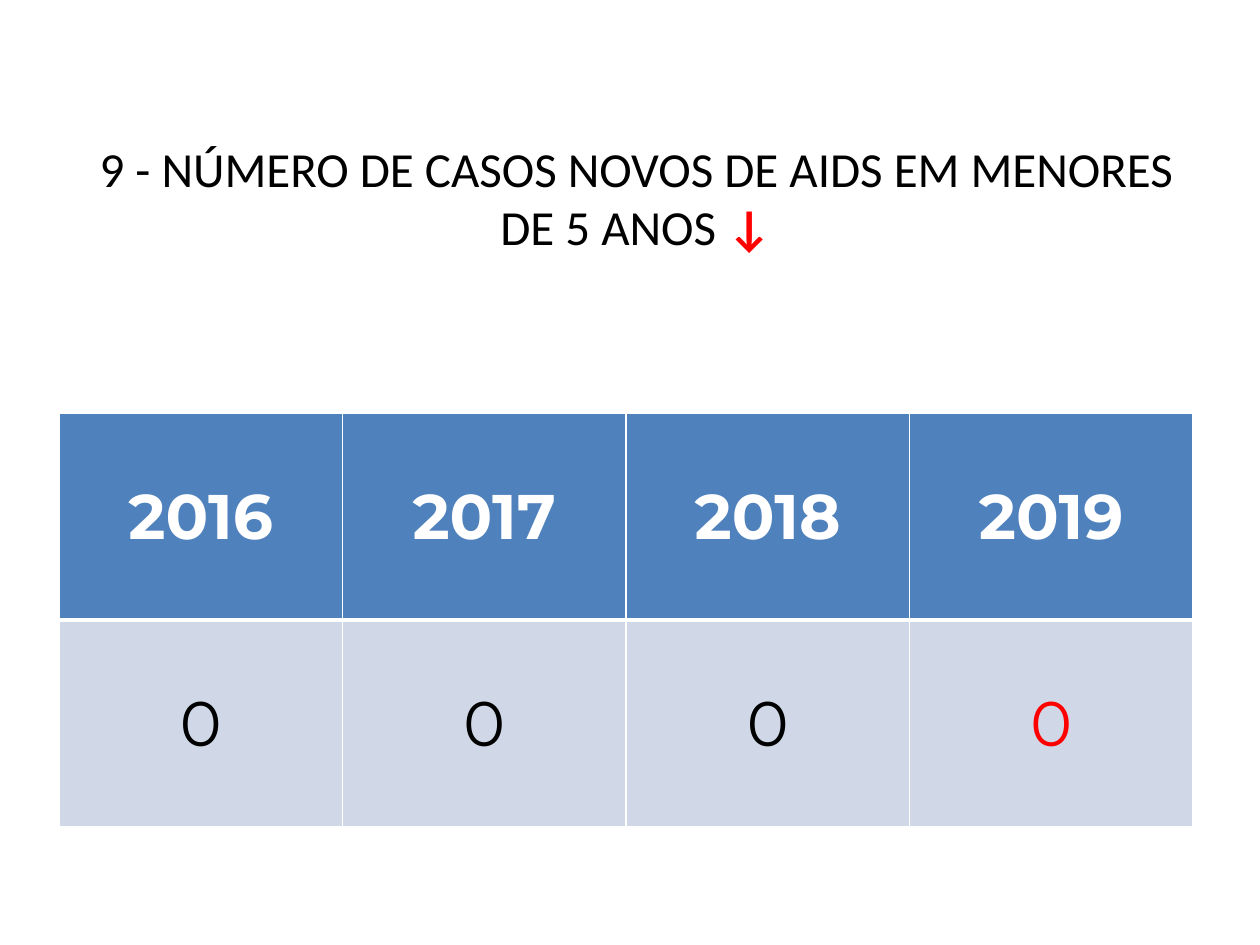
from dataclasses import dataclass

from lxml.etree import SubElement
from pptx import Presentation
from pptx.dml.color import RGBColor as Rgb
from pptx.enum.text import MSO_ANCHOR as Anchor, PP_ALIGN as Align
from pptx.oxml.ns import qn
from pptx.util import Pt

SCALE = 914400 / 126
HUES = {"white": "FFFFFF", "black": "000000", "red": "FF0000",
        "blue": "4F81BD", "pale": "D0D8E8"}


@dataclass
class Run:
    text: str
    size: int
    font: str
    hue: str = "black"
    bold: bool = False


@dataclass
class Row:
    runs: list[Run]
    fill: str
    top: int
    base: int


def px(n: int) -> int:
    return round(n * SCALE)


def write(frame, runs: list[Run]) -> None:
    para = frame.paragraphs[0]
    para.alignment = Align.CENTER
    for item in runs:
        run = para.add_run()
        run.text = item.text
        font = run.font
        font.size, font.name, font.bold = Pt(item.size), item.font, item.bold
        font.color.rgb = Rgb.from_string(HUES[item.hue])


def edge(cell, row: Row) -> None:
    props = cell._tc.get_or_add_tcPr()
    sides = {"lnL": 1, "lnR": 1, "lnT": row.top, "lnB": row.base}
    for spot, (side, wide) in enumerate(sides.items()):
        line = SubElement(props, qn(f"a:{side}"), w=str(Pt(wide)))
        fill = SubElement(line, qn("a:solidFill"))
        SubElement(fill, qn("a:srgbClr"), val=HUES["white"])
        props.insert(spot, line)


def draw_title(slide, runs: list[Run]) -> None:
    frame = slide.shapes.add_textbox(px(69), px(20), px(1134), px(354)).text_frame
    frame.word_wrap = True
    frame.vertical_anchor = Anchor.MIDDLE
    write(frame, runs)


def draw_table(slide, rows: list[Row]) -> None:
    table = slide.shapes.add_table(len(rows), len(rows[0].runs), px(59), px(413),
                                   px(1134), px(414)).table
    for r, row in enumerate(rows):
        for c, run in enumerate(row.runs):
            cell = table.cell(r, c)
            cell.vertical_anchor = Anchor.MIDDLE
            cell.fill.solid()
            cell.fill.fore_color.rgb = Rgb.from_string(HUES[row.fill])
            edge(cell, row)
            write(cell.text_frame, [run])


def main() -> None:
    deck = Presentation()
    deck.slide_width, deck.slide_height = px(1260), px(945)
    slide = deck.slides.add_slide(deck.slide_layouts[6])
    draw_title(slide, [
        Run("9 - NÚMERO DE CASOS NOVOS DE AIDS EM MENORES DE 5 ANOS ", 28, "Calibri"),
        Run("↓", 28, "Calibri", "red", True),
    ])
    years = [Run(str(year), 36, "Montserrat", "white", True)
             for year in range(2016, 2020)]
    cases = [Run("0", 36, "Montserrat", hue)
             for hue in ("black", "black", "black", "red")]
    draw_table(slide, [Row(years, "blue", 1, 3), Row(cases, "pale", 3, 1)])
    deck.save("out.pptx")


if __name__ == "__main__":
    main()
